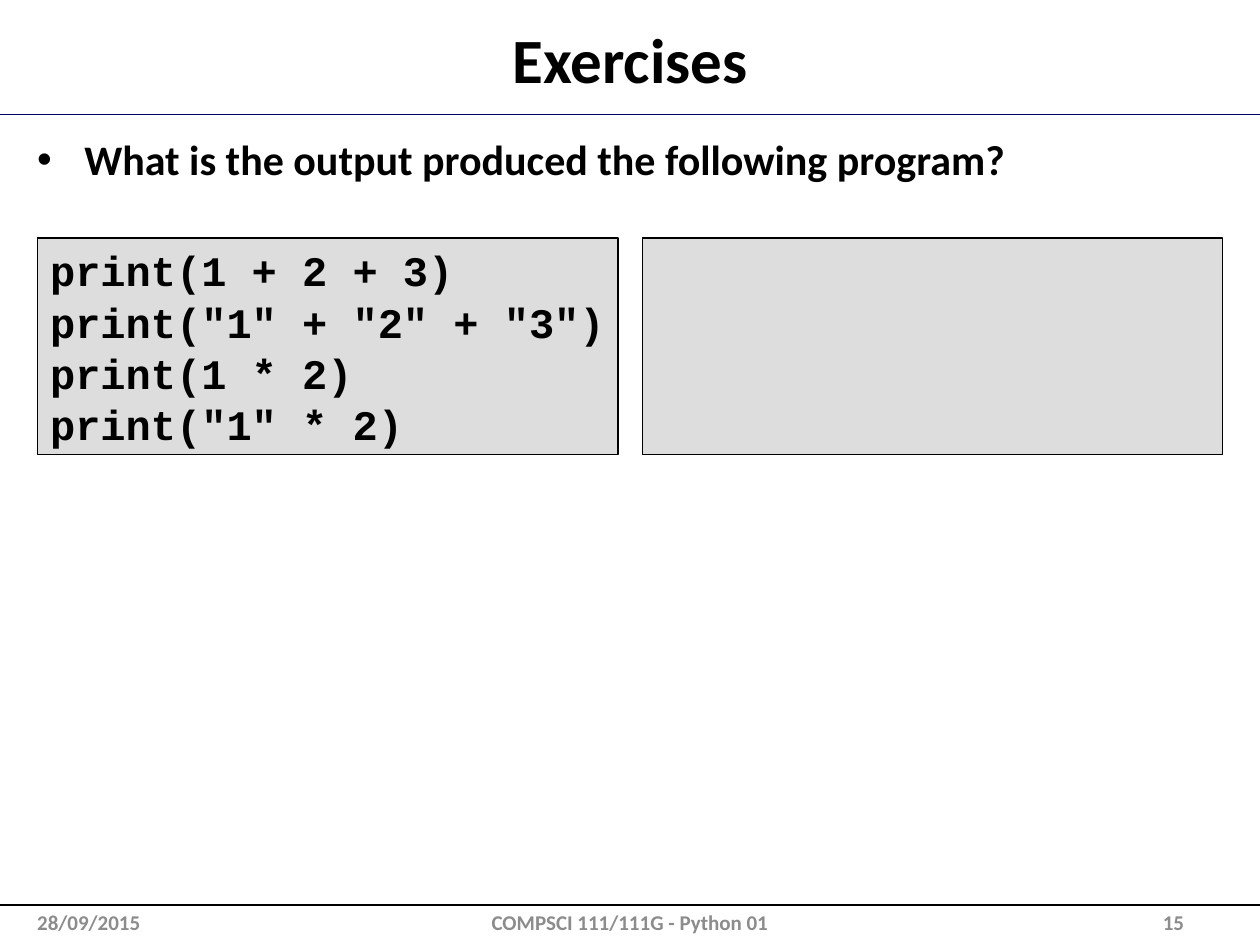
"""Build the Exercises slide with a code box and an empty answer box."""
from lxml import etree
from pptx import Presentation
from pptx import util as u
from pptx.dml.color import RGBColor
from pptx.enum import shapes, text
from pptx.oxml import ns

BLACK = RGBColor(0x00, 0x00, 0x00)
NAVY = RGBColor(0x00, 0x00, 0x66)
GREY = RGBColor(0x8C, 0x8C, 0x8C)
PALE = RGBColor(0xDD, 0xDD, 0xDD)
WIDE, HIGH = 25.4, 19.05
LEFT, MID, RIGHT = text.PP_ALIGN.LEFT, text.PP_ALIGN.CENTER, text.PP_ALIGN.RIGHT
TOP, HALF = text.MSO_ANCHOR.TOP, text.MSO_ANCHOR.MIDDLE
CODE = ["print(1 + 2 + 3)", 'print("1" + "2" + "3")', "print(1 * 2)", 'print("1" * 2)']


class Deck:
    """Hold the text styles and the current slide."""

    def __init__(self):
        """Open a deck with one title-only slide."""
        self.deck = Presentation()
        self.deck.slide_width, self.deck.slide_height = u.Cm(WIDE), u.Cm(HIGH)
        self.slide = self.deck.slides.add_slide(self.deck.slide_layouts[5])
        base = {"name": "Calibri", "bold": True}
        self.style = {
            "title": {**base, "size": u.Pt(36), "color": BLACK},
            "body": {**base, "size": u.Pt(24), "color": BLACK},
            "code": {"name": "Courier New", "bold": True, "size": u.Pt(24), "color": BLACK},
            "foot": {**base, "size": u.Pt(12), "color": GREY},
        }

    def fill(self, shape, lines, style, align=LEFT, anchor=TOP, pitch=None):
        """Fill a shape with styled lines."""
        frame = shape.text_frame
        frame.word_wrap = True
        frame.auto_size = text.MSO_AUTO_SIZE.NONE
        frame.vertical_anchor = anchor
        frame.text = "\n".join(lines)
        for para in frame.paragraphs:
            para.alignment = align
            para.line_spacing = pitch
            for run in para.runs:
                for key, value in self.style[style].items():
                    if key == "color":
                        run.font.color.rgb = value
                    else:
                        setattr(run.font, key, value)

    def title(self, words, x, y, w, h):
        """Place and format the slide title."""
        shape = self.slide.shapes.title
        for key, value in {"left": x, "top": y, "width": w, "height": h}.items():
            setattr(shape, key, u.Cm(value))
        self.fill(shape, [words], "title", MID, HALF)

    def label(self, words, style, x, y, w, h, align=LEFT, anchor=TOP):
        """Add a text box and return it."""
        shape = self.slide.shapes.add_textbox(*map(u.Cm, (x, y, w, h)))
        self.fill(shape, [words], style, align, anchor)
        return shape

    def bullet(self, words, x, y, w, h):
        """Add a bulleted line with a hanging indent."""
        shape = self.label(words, "body", x, y, w, h)
        props = shape.text_frame.paragraphs[0]._p.get_or_add_pPr()
        hang = u.Cm(0.95)
        props.set("marL", str(hang))
        props.set("indent", str(-hang))
        etree.SubElement(props, ns.qn("a:buFont")).set("typeface", "Arial")
        etree.SubElement(props, ns.qn("a:buChar")).set("char", "•")

    def panel(self, lines, x, y, w, h):
        """Add a pale outlined box for code."""
        shape = self.slide.shapes.add_shape(
            shapes.MSO_SHAPE.RECTANGLE, *map(u.Cm, (x, y, w, h)))
        shape.shadow.inherit = False
        shape.fill.solid()
        shape.fill.fore_color.rgb = PALE
        shape.line.color.rgb = BLACK
        shape.line.width = u.Pt(0.75)
        if lines:
            self.fill(shape, lines, "code", pitch=u.Pt(29.2))

    def rule(self, y, color):
        """Draw a line across the whole slide."""
        line = self.slide.shapes.add_connector(
            shapes.MSO_CONNECTOR.STRAIGHT, 0, u.Cm(y), u.Cm(WIDE), u.Cm(y))
        line.line.color.rgb = color
        line.line.width = u.Pt(1)
        etree.SubElement(line._element.spPr, ns.qn("a:effectLst"))


def main():
    """Compose and save the slide."""
    deck = Deck()
    deck.rule(2.31, NAVY)
    deck.rule(18.24, BLACK)
    deck.title("Exercises", 0.25, 0.3, 24.9, 1.75)
    deck.bullet("What is the output produced the following program?", 0.5, 2.57, 24.4, 15.2)
    width, gap = 11.7, 0.49
    for col, lines in enumerate([CODE, []]):
        deck.panel(lines, 0.76 + col * (width + gap), 4.8, width, 4.37)
    for words, x, w, align in [
        ("28/09/2015", 0.5, 5.92, LEFT),
        ("COMPSCI 111/111G - Python 01", 8.68, 8.04, MID),
        ("15", 18.2, 5.92, RIGHT),
    ]:
        deck.label(words, "foot", x, 18.24, w, 0.69, align, HALF)
    deck.deck.save("out.pptx")


if __name__ == "__main__":
    main()
